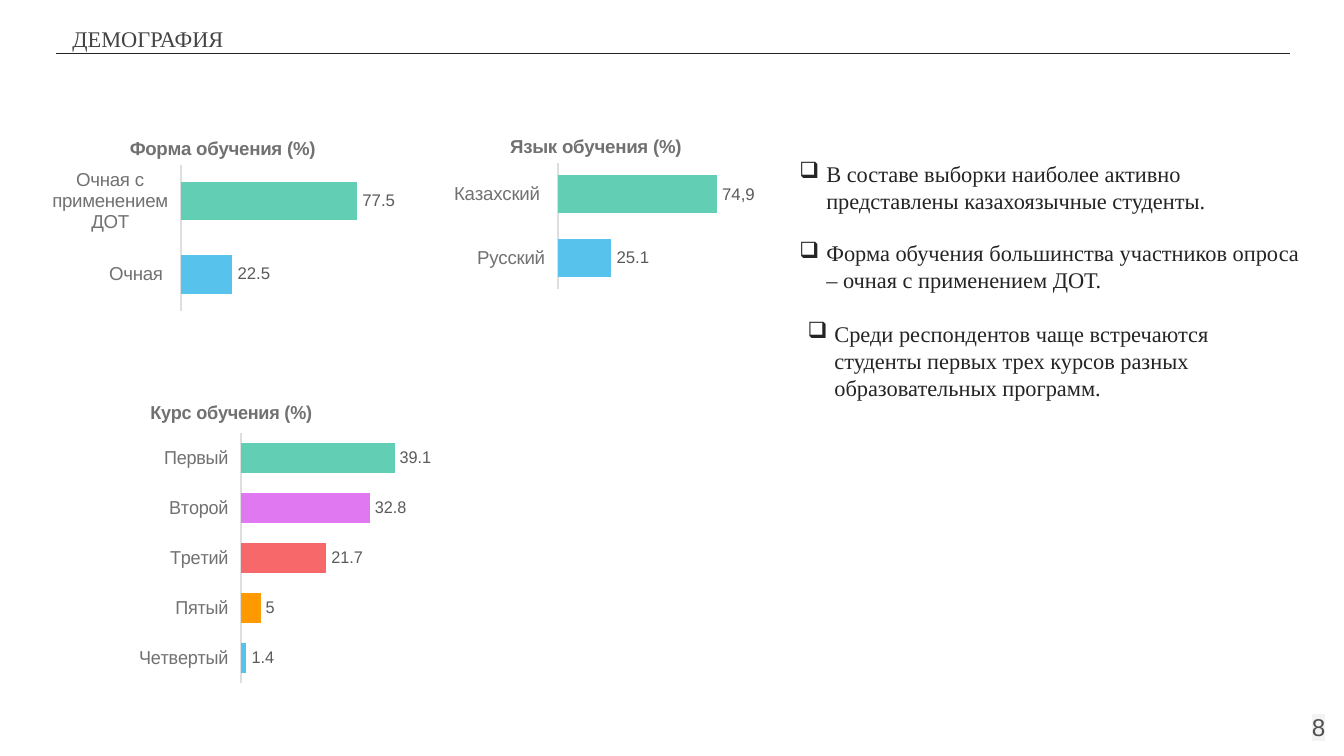
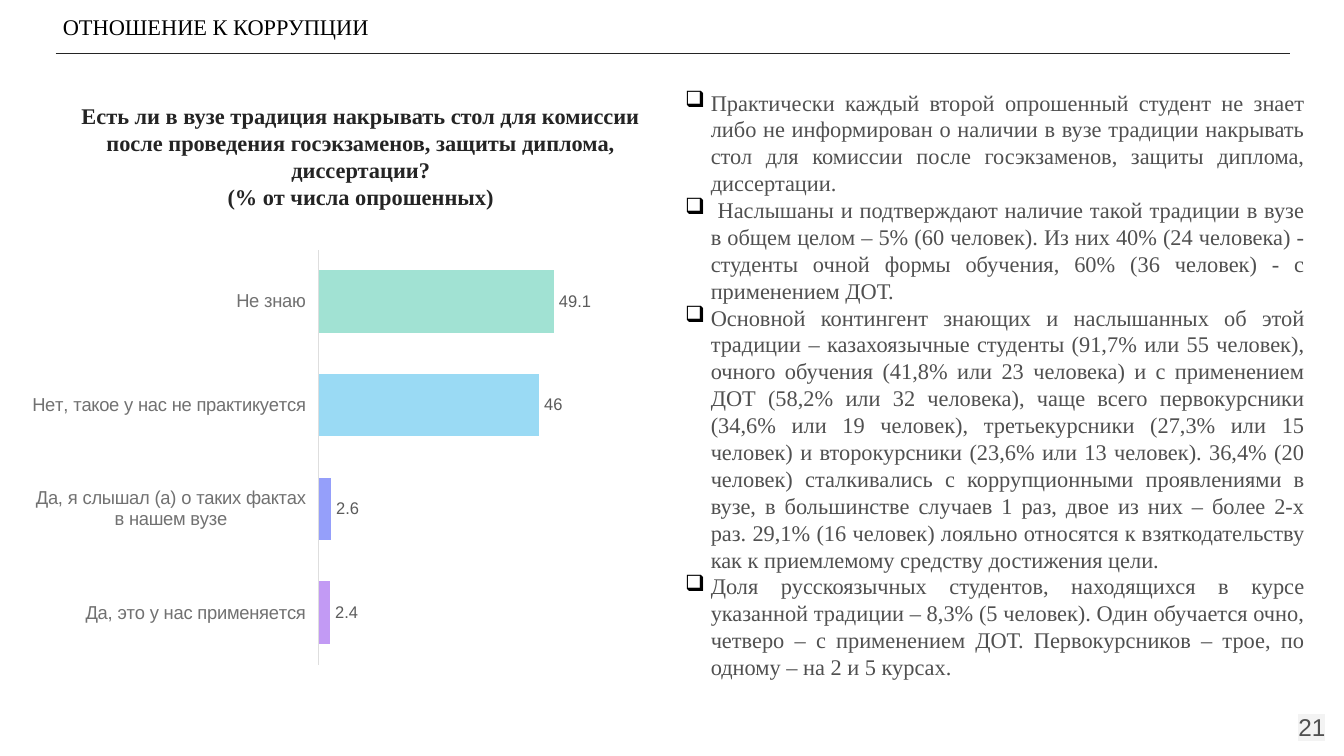
"""Build two survey slides: demographics and attitude to corruption."""
from dataclasses import dataclass

from lxml.etree import SubElement
from pptx import Presentation
from pptx.chart.data import CategoryChartData
from pptx.dml.color import RGBColor
from pptx.enum.chart import XL_CHART_TYPE as ChartType, XL_LABEL_POSITION as LabelPos
from pptx.enum.chart import XL_TICK_LABEL_POSITION as TickLabelPos, XL_TICK_MARK as TickMark
from pptx.enum.shapes import MSO_CONNECTOR as Connector
from pptx.enum.text import MSO_ANCHOR as Anchor, PP_ALIGN as Align
from pptx.oxml import parse_xml
from pptx.oxml.ns import nsdecls, qn
from pptx.slide import Slide
from pptx.util import Pt

INK = RGBColor(0x24, 0x24, 0x24)
BLACK = RGBColor(0x00, 0x00, 0x00)
TITLE_GREY = RGBColor(0x43, 0x43, 0x43)
BODY_GREY = RGBColor(0x50, 0x50, 0x50)
LABEL_GREY = RGBColor(0x5B, 0x5B, 0x5B)
AXIS_GREY = RGBColor(0x71, 0x71, 0x71)
AXIS_LINE = RGBColor(0xDE, 0xDE, 0xDE)
HIGHLIGHT = RGBColor(0xF3, 0xF3, 0xF3)
GREEN = RGBColor(0x62, 0xCF, 0xB5)
BLUE = RGBColor(0x57, 0xC2, 0xEC)
ORANGE = RGBColor(0xFF, 0x99, 0x00)
RED = RGBColor(0xF7, 0x68, 0x6B)
PINK = RGBColor(0xE0, 0x78, 0xF1)
PALE_GREEN = RGBColor(0xA1, 0xE2, 0xD3)
PALE_BLUE = RGBColor(0x9A, 0xDA, 0xF4)
PERIWINKLE = RGBColor(0x95, 0x9F, 0xFA)
LILAC = RGBColor(0xC2, 0x9A, 0xF4)
SERIF, SANS = "Times New Roman", "Arial"
INSET = Pt(7.2)


@dataclass(frozen=True)
class Box:
    """A rectangle in points."""
    x: float
    y: float
    w: float
    h: float

    def emu(self) -> tuple[Pt, Pt, Pt, Pt]:
        """Return the rectangle as lengths."""
        return Pt(self.x), Pt(self.y), Pt(self.w), Pt(self.h)


@dataclass(frozen=True)
class Text:
    """A text box with one style for all its paragraphs."""
    box: Box
    text: str
    color: RGBColor = INK
    size: float = 12
    font: str = SERIF
    bold: bool = False
    align: Align = Align.LEFT
    anchor: Anchor = Anchor.TOP
    bullet: RGBColor | None = None
    indent: float = 14.4
    highlight: RGBColor | None = None


@dataclass(frozen=True)
class Bar:
    """One bar of a chart."""
    name: str
    value: float
    color: RGBColor
    label: str = ""


@dataclass(frozen=True)
class BarChart:
    """A bar chart with bars listed from the bottom up."""
    box: Box
    plot: Box
    bars: list[Bar]
    gap: int = 66
    title: str = ""
    title_x: float = 0
    title_y: float = 0


def add_text(s: Slide, item: Text) -> None:
    """Draw a text box."""
    sp = s.shapes.add_textbox(*item.box.emu())
    tf = sp.text_frame
    tf.word_wrap = True
    tf.vertical_anchor = item.anchor
    tf.margin_left = tf.margin_right = tf.margin_top = tf.margin_bottom = INSET
    tf.text = item.text
    for p in tf.paragraphs:
        p.alignment = item.align
        if item.bullet is not None:
            add_bullet(p._p.get_or_add_pPr(), item.bullet, item.indent)
        for r in p.runs:
            r.font.size, r.font.name, r.font.bold = Pt(item.size), item.font, item.bold
            r.font.color.rgb = item.color
            if item.highlight is not None:
                r._r.rPr.find(qn("a:solidFill")).addnext(parse_xml(
                    f'<a:highlight {nsdecls("a")}><a:srgbClr val="{item.highlight}"/></a:highlight>'))


def add_bullet(ppr, color: RGBColor, indent: float) -> None:
    """Give a paragraph a box bullet with a hanging indent."""
    ppr.set("marL", str(Pt(indent)))
    ppr.set("indent", str(-Pt(indent)))
    SubElement(SubElement(ppr, qn("a:buClr")), qn("a:srgbClr")).set("val", str(color))
    SubElement(ppr, qn("a:buChar")).set("char", "❑")


def manual_layout(x: float, y: float, size: tuple[float, float] | None = None):
    """Return a chart layout element in fractions of the chart."""
    parts = {"xMode": "edge", "yMode": "edge", "x": x, "y": y}
    if size:
        parts = {"layoutTarget": "inner", **parts, "w": size[0], "h": size[1]}
    body = "".join(f'<c:{tag} val="{val}"/>' for tag, val in parts.items())
    return parse_xml(f'<c:layout {nsdecls("c")}><c:manualLayout>{body}</c:manualLayout></c:layout>')


def set_layout(parent, layout, before: str) -> None:
    """Put a layout into a chart element ahead of the given child."""
    for old in parent.findall(qn("c:layout")):
        parent.remove(old)
    parent.find(qn(before)).addprevious(layout)


def add_title(chart, item: BarChart) -> None:
    """Give a chart its bold title, or none."""
    chart.has_title = bool(item.title)
    if not item.title:
        return
    p = chart.chart_title.text_frame.paragraphs[0]
    p.text = item.title
    font = p.runs[0].font
    font.size, font.name, font.bold = Pt(10), SANS, True
    font.color.rgb = AXIS_GREY
    chart.chart_title.include_in_layout = False
    set_layout(chart.chart_title._element, manual_layout(item.title_x, item.title_y), "c:overlay")


def add_bar_chart(s: Slide, item: BarChart) -> None:
    """Draw a horizontal bar chart with coloured points."""
    data = CategoryChartData()
    data.categories = [bar.name for bar in item.bars]
    data.add_series("Series 1", [bar.value for bar in item.bars])
    chart = s.shapes.add_chart(ChartType.BAR_CLUSTERED, *item.box.emu(), data).chart
    chart.has_legend = False
    chart.font.size, chart.font.name = Pt(10), SANS
    chart.font.color.rgb = INK
    add_title(chart, item)

    axis = chart.category_axis
    axis.major_tick_mark = axis.minor_tick_mark = TickMark.NONE
    axis.tick_label_position = TickLabelPos.LOW
    axis.tick_labels.font.size, axis.tick_labels.font.name = Pt(10), SANS
    axis.tick_labels.font.color.rgb = AXIS_GREY
    axis.format.line.color.rgb = AXIS_LINE
    axis.format.line.width = Pt(0.75)
    chart.value_axis.visible = False
    chart.value_axis.has_major_gridlines = False
    chart.value_axis.minimum_scale = 0

    plot = chart.plots[0]
    plot.gap_width = item.gap
    plot.vary_by_categories = False
    series = plot.series[0]
    series.format.fill.solid()
    series.format.fill.fore_color.rgb = GREEN
    labels = series.data_labels
    labels.show_value = True
    labels.position = LabelPos.OUTSIDE_END
    labels.font.size, labels.font.name = Pt(9), SANS
    labels.font.color.rgb = LABEL_GREY
    for i, bar in enumerate(item.bars):
        fill = series.points[i].format.fill
        fill.solid()
        fill.fore_color.rgb = bar.color
        if bar.label:
            label = series.points[i].data_label
            label.text_frame.text = bar.label
            font = label.text_frame.paragraphs[0].runs[0].font
            font.size, font.name = Pt(9), SANS
            font.color.rgb = LABEL_GREY
            label.position = LabelPos.OUTSIDE_END
    area = item.plot
    set_layout(chart._chartSpace.chart.plotArea,
               manual_layout(area.x, area.y, (area.w, area.h)), "c:barChart")


def add_frame(prs: Presentation, title: Text, number: int) -> Slide:
    """Add a blank slide with its rule, title and page number."""
    s = prs.slides.add_slide(prs.slide_layouts[6])
    rule = s.shapes.add_connector(Connector.STRAIGHT, Pt(29.8), Pt(28.8), Pt(691), Pt(28.8))
    rule.line.color.rgb = INK
    rule.line.width = Pt(0.75)
    SubElement(rule._element.spPr, qn("a:effectLst"))
    add_text(s, title)
    add_text(s, Text(Box(673.9, 373.7, 43.2, 31), str(number), BODY_GREY, 13, SANS,
                     align=Align.RIGHT, anchor=Anchor.MIDDLE, highlight=HIGHLIGHT))
    return s


DEMOGRAPHY_CHARTS = [
    BarChart(Box(22.3, 61.9, 189.4, 117.4), Box(0.395, 0.224, 0.579, 0.668),
             [Bar("Очная ", 22.5, BLUE), Bar("Очная с применением ДОТ", 77.5, GREEN)],
             90, "Форма обучения (%)", 0.24, 0.08),
    BarChart(Box(231.8, 61.9, 172.8, 101.5), Box(0.389, 0.25, 0.526, 0.668),
             [Bar("Русский", 25.1, BLUE), Bar("Казахский ", 74.9, GREEN, "74,9")],
             title="Язык обучения (%)", title_x=0.23, title_y=0.08),
    BarChart(Box(22.3, 202.3, 208.8, 202.3), Box(0.529, 0.147, 0.469, 0.661),
             [Bar("Четвертый", 1.4, BLUE), Bar("Пятый", 5, ORANGE), Bar("Третий", 21.7, RED),
              Bar("Второй", 32.8, PINK), Bar("Первый", 39.1, GREEN)],
             title="Курс обучения (%)", title_x=0.28, title_y=0.05),
]
DEMOGRAPHY_NOTES = [
    (Box(421.2, 78.5, 283.7, 243.4),
     "В составе выборки наиболее активно представлены казахоязычные студенты."),
    (Box(421.2, 121, 289.4, 189.4),
     "Форма обучения большинства участников опроса – очная с применением ДОТ."),
    (Box(425.5, 164.2, 275, 170.6),
     "Среди респондентов чаще встречаются студенты первых трех курсов разных "
     "образовательных программ."),
]
TRADITION_CHART = BarChart(
    Box(17.3, 111.6, 322.6, 246.2), Box(0.466, 0.09, 0.486, 0.903),
    [Bar("Да, это у нас применяется", 2.4, LILAC),
     Bar("Да, я слышал (а) о таких фактах в нашем вузе", 2.6, PERIWINKLE),
     Bar("Нет, такое у нас не практикуется", 46, PALE_BLUE),
     Bar("Не знаю", 49.1, PALE_GREEN)])
TRADITION_QUESTION = (
    "Есть ли в вузе традиция накрывать стол для комиссии после проведения госэкзаменов, "
    "защиты диплома, диссертации?\n(% от числа опрошенных)")
TRADITION_NOTES = [
    "Практически каждый второй опрошенный студент не знает либо не информирован о наличии "
    "в вузе традиции накрывать стол для комиссии после госэкзаменов, защиты диплома, "
    "диссертации.",
    " Наслышаны и подтверждают наличие такой традиции в вузе в общем целом – 5% (60 человек). "
    "Из них 40% (24 человека) - студенты очной формы обучения, 60% (36 человек) - "
    "с применением ДОТ.",
    "Основной контингент знающих и наслышанных об этой традиции – казахоязычные студенты "
    "(91,7% или 55 человек), очного обучения (41,8% или 23 человека) и с применением ДОТ "
    "(58,2% или 32 человека), чаще всего первокурсники (34,6% или 19 человек), "
    "третьекурсники (27,3% или 15 человек) и второкурсники (23,6% или 13 человек). "
    "36,4% (20 человек) сталкивались с коррупционными проявлениями в вузе, в большинстве "
    "случаев 1 раз, двое из них – более 2-х раз. 29,1% (16 человек) лояльно относятся "
    "к взяткодательству как к приемлемому средству достижения цели.",
    "Доля русскоязычных студентов, находящихся в курсе указанной традиции – 8,3% (5 человек). "
    "Один обучается очно, четверо – с применением ДОТ. Первокурсников – трое, по одному – "
    "на 2 и 5 курсах.",
]


def add_demography(prs: Presentation) -> None:
    """Add the demographics slide."""
    s = add_frame(prs, Text(Box(31.7, 6.5, 318.2, 27.4), "ДЕМОГРАФИЯ", TITLE_GREY), 8)
    for chart in DEMOGRAPHY_CHARTS:
        add_bar_chart(s, chart)
    for box, note in DEMOGRAPHY_NOTES:
        add_text(s, Text(box, note, bullet=INK))


def add_corruption(prs: Presentation) -> None:
    """Add the slide on attitude to corruption."""
    s = add_frame(prs, Text(Box(26.6, 0, 659.5, 28.8), "ОТНОШЕНИЕ К КОРРУПЦИИ", BLACK), 21)
    add_text(s, Text(Box(26.6, 47.5, 333.4, 64.1), TRADITION_QUESTION, bold=True,
                     align=Align.CENTER))
    add_text(s, Text(Box(360, 40.3, 346.3, 325.4), "\n".join(TRADITION_NOTES), BODY_GREY,
                     align=Align.JUSTIFY, bullet=BLACK, indent=13.7))
    add_bar_chart(s, TRADITION_CHART)


def main() -> None:
    """Build and save the presentation."""
    prs = Presentation()
    prs.slide_width, prs.slide_height = Pt(720), Pt(405)
    add_demography(prs)
    add_corruption(prs)
    prs.save("out.pptx")


if __name__ == "__main__":
    main()
